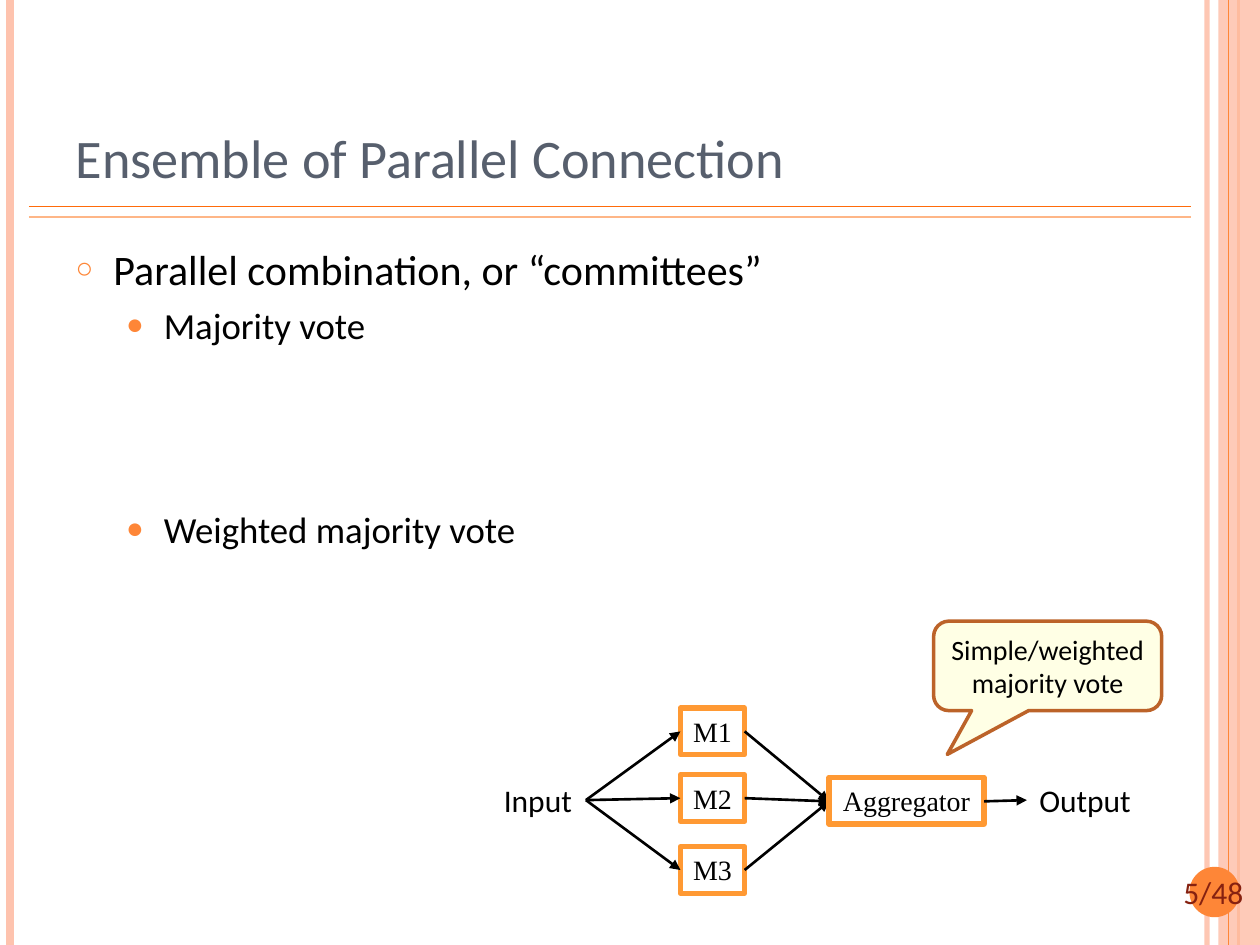
import pptx
import pptx.dml.color
import pptx.enum.shapes
import pptx.enum.text
import pptx.oxml.ns
import pptx.util
import lxml.etree

Pt = pptx.util.Pt
Shapes = pptx.enum.shapes.MSO_SHAPE
Align = pptx.enum.text.PP_ALIGN
Anchor = pptx.enum.text.MSO_ANCHOR
AutoSize = pptx.enum.text.MSO_AUTO_SIZE
qn = pptx.oxml.ns.qn

COLORS = {
    "orange": "FE8637", "deep orange": "FF6B0A", "pale orange": "FEB687",
    "peach": "FEC3AE", "box line": "FF9933", "callout line": "BC6329",
    "cream": "FFFFCC", "white": "FFFFFF", "black": "000000",
    "slate": "575F6D", "brick": "862110",
}
COLUMNS, ROWS = 100, 75
SANS, SERIF = "Calibri", "Times New Roman"


class SlideBuilder:
    def __init__(self, presentation):
        self.cell_width = presentation.slide_width / COLUMNS
        self.cell_height = presentation.slide_height / ROWS
        self.slide = presentation.slides.add_slide(presentation.slide_layouts[1])

    def point(self, column, row):
        return round(column * self.cell_width), round(row * self.cell_height)

    def area(self, column, row, width, height):
        return *self.point(column, row), *self.point(width, height)

    def apply(self, target, values):
        for name, value in values.items():
            setattr(target, name, value)

    def color(self, color_format, name):
        color_format.rgb = pptx.dml.color.RGBColor.from_string(COLORS[name])

    def opacity(self, element, percent):
        if percent < 100:
            for color in element.iter(qn("a:srgbClr")):
                lxml.etree.SubElement(color, qn("a:alpha"), val=str(percent * 1000))

    def fill_paragraph(self, paragraph, text, size, font=SANS, color="black", **formats):
        paragraph.text = text
        self.apply(paragraph, formats)
        self.apply(paragraph.font, {"size": Pt(size), "name": font, "bold": False})
        self.color(paragraph.font.color, color)

    def text(self, frame, lines, size, font=SANS, color="black",
             alignment=Align.LEFT, anchor=Anchor.TOP):
        self.apply(frame, {"word_wrap": False, "vertical_anchor": anchor,
                           "auto_size": AutoSize.SHAPE_TO_FIT_TEXT})
        for index, line in enumerate(lines):
            paragraph = frame.add_paragraph() if index else frame.paragraphs[0]
            self.fill_paragraph(paragraph, line, size, font, color, alignment=alignment)

    def label(self, area, text, size=18, **formats):
        box = self.slide.shapes.add_textbox(*self.area(*area))
        self.text(box.text_frame, [text], size, **formats)

    def shape(self, kind, area, fill, line=None, width=0, opacity=100):
        shape = self.slide.shapes.add_shape(kind, *self.area(*area))
        shape.shadow.inherit = False
        shape.fill.solid()
        self.color(shape.fill.fore_color, fill)
        self.opacity(shape._element.spPr, opacity)
        if line:
            self.color(shape.line.color, line)
            shape.line.width = Pt(width)
        else:
            shape.line.fill.background()
        return shape

    def box(self, area, text):
        shape = self.shape(Shapes.RECTANGLE, area, "white", "box line", 3)
        self.text(shape.text_frame, [text], 16, SERIF, alignment=Align.CENTER)

    def callout(self, area, lines, adjustments):
        shape = self.shape(Shapes.ROUNDED_RECTANGULAR_CALLOUT, area,
                           "cream", "callout line", 2, 50)
        for index, value in enumerate(adjustments):
            shape.adjustments[index] = value
        self.text(shape.text_frame, lines, 16, alignment=Align.CENTER,
                  anchor=Anchor.MIDDLE)

    def line(self, start, end, color="black", width=1.5, opacity=100, arrow=False):
        connector = self.slide.shapes.add_connector(
            pptx.enum.shapes.MSO_CONNECTOR.STRAIGHT,
            *self.point(*start), *self.point(*end))
        connector.line.width = Pt(width)
        self.color(connector.line.color, color)
        properties = connector._element.spPr
        self.opacity(properties, opacity)
        if arrow:
            outline = properties.find(qn("a:ln"))
            lxml.etree.SubElement(outline, qn("a:tailEnd"), type="triangle")
        lxml.etree.SubElement(properties, qn("a:effectLst"))

    def place(self, placeholder, area, anchor):
        names = ("left", "top", "width", "height")
        self.apply(placeholder, dict(zip(names, self.area(*area))))
        self.apply(placeholder.text_frame, {"word_wrap": True, "auto_size": AutoSize.NONE,
                                            "vertical_anchor": anchor})
        return placeholder.text_frame

    def title(self, area, text):
        frame = self.place(self.slide.shapes.title, area, Anchor.BOTTOM)
        self.fill_paragraph(frame.paragraphs[0], text, 31, color="slate",
                            alignment=Align.LEFT)

    def bullets(self, area, items):
        frame = self.place(self.slide.placeholders[1], area, Anchor.TOP)
        looks = [("○", 70, 24, 0.3), ("●", 80, 21, 0.7)]
        for index, (level, text, space) in enumerate(items):
            symbol, percent, size, margin = looks[level]
            paragraph = frame.add_paragraph() if index else frame.paragraphs[0]
            properties = paragraph._p.get_or_add_pPr()
            properties.set("marL", str(pptx.util.Inches(margin)))
            properties.set("indent", str(pptx.util.Inches(-0.3)))
            color = lxml.etree.SubElement(properties, qn("a:buClr"))
            lxml.etree.SubElement(color, qn("a:srgbClr"), val=COLORS["orange"])
            lxml.etree.SubElement(properties, qn("a:buSzPct"), val=str(percent * 1000))
            lxml.etree.SubElement(properties, qn("a:buChar"), char=symbol)
            self.fill_paragraph(paragraph, text, size, level=level,
                                space_before=Pt(space))


def main():
    presentation = pptx.Presentation()
    presentation.slide_width = pptx.util.Inches(10)
    presentation.slide_height = pptx.util.Inches(7.5)
    builder = SlideBuilder(presentation)

    def stripe(column, color, width, opacity=100):
        builder.line((column, 0), (column, ROWS), color, width, opacity)

    stripe(95.8, "peach", 3, 93)
    stripe(0.8, "peach", 4.5)
    stripe(98.3, "orange", 1.5)
    builder.shape(Shapes.RECTANGLE, (96.7, 0, 3.3, ROWS), "peach", opacity=87)
    stripe(97.5, "orange", 0.75)
    for row, color in ((16.4, "deep orange"), (17.2, "pale orange")):
        builder.line((2.3, row), (94.5, row), color, 1)
    builder.shape(Shapes.OVAL, (94.4, 68.8, 4, 4), "orange")
    builder.label((91.8, 68.8, 9, 4), "5/48", color="brick", alignment=Align.CENTER)

    builder.title((5, 3, 81.7, 12.5), "Ensemble of Parallel Connection")
    builder.bullets((5, 18.8, 81.7, 52), [
        (0, "Parallel combination, or “committees”", 0),
        (1, "Majority vote", 5),
        (1, "Weighted majority vote", 91.5),
    ])

    box_width, box_height = 5.1, 3.7
    model_left, aggregator_left, aggregator_width = 54, 65.8, 12.3
    input_point, aggregator_point = (46.5, 63.5), (aggregator_left, 63.6)
    for name, top in (("M1", 56.2), ("M2", 61.5), ("M3", 67.2)):
        middle = top + box_height / 2
        builder.box((model_left, top, box_width, box_height), name)
        builder.line(input_point, (model_left, middle), arrow=True)
        builder.line((model_left + box_width, middle), aggregator_point, arrow=True)
    builder.box((aggregator_left, 61.7, aggregator_width, box_height), "Aggregator")
    builder.line((aggregator_left + aggregator_width, 63.6), (81.5, 63.5), arrow=True)
    builder.callout((74.1, 49.3, 18.1, 7.1), ["Simple/weighted", "majority vote"],
                    (-0.44, 0.99, 0.17))
    builder.label((39, 61.5, 7.5, 4), "Input")
    builder.label((81.5, 61.5, 9.4, 4), "Output")

    presentation.save("out.pptx")


if __name__ == "__main__":
    main()
